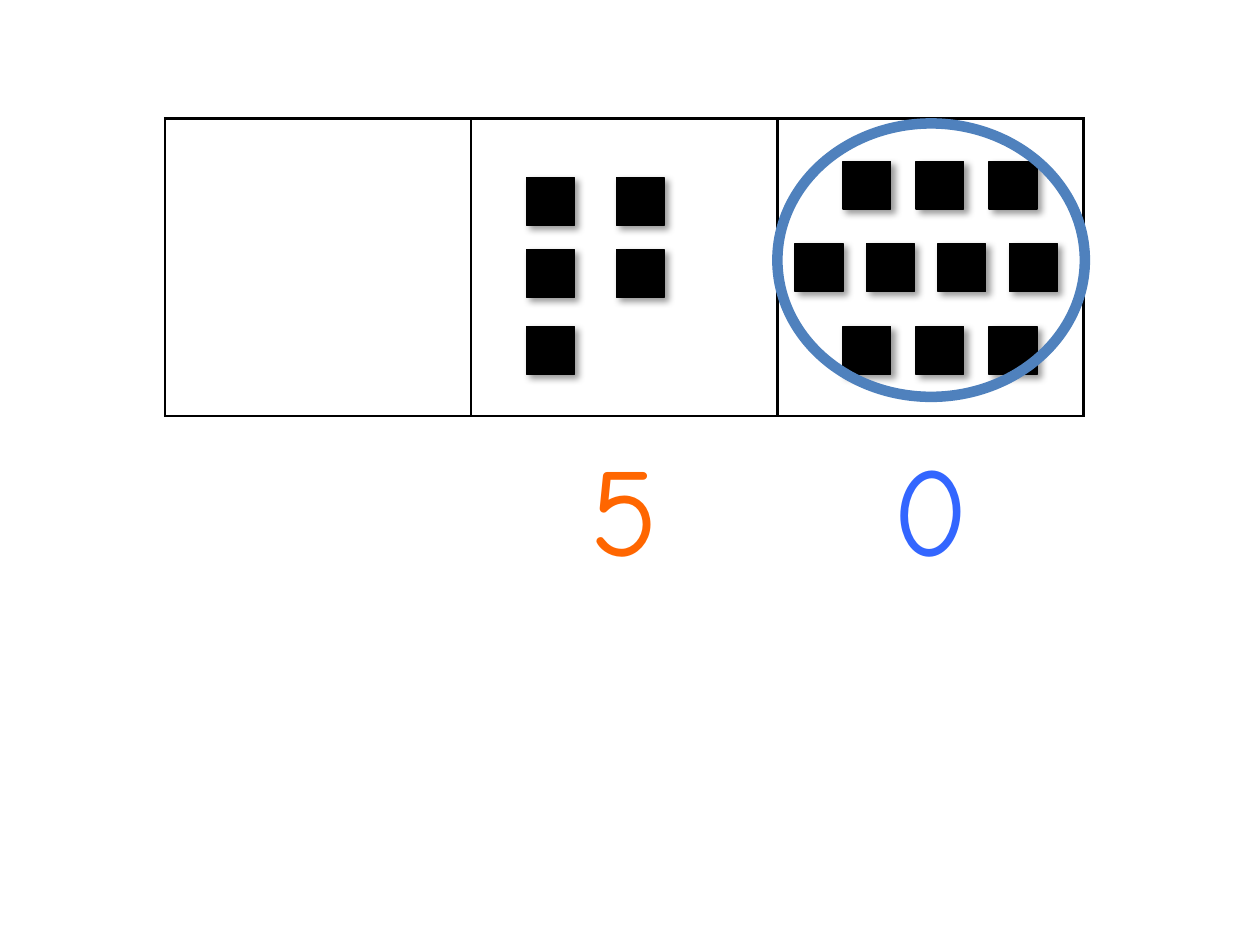
from itertools import product

from lxml.etree import SubElement
from pptx import Presentation
from pptx.dml.color import RGBColor
from pptx.enum.shapes import MSO_SHAPE as Shape
from pptx.enum.text import PP_ALIGN as Align
from pptx.oxml.ns import qn
from pptx.util import Inches, Pt

BLACK = RGBColor(0x00, 0x00, 0x00)
ORANGE = RGBColor(0xFF, 0x66, 0x00)
BLUE = RGBColor(0x33, 0x66, 0xFF)
RING_BLUE = RGBColor(0x4F, 0x81, 0xBD)

COLUMNS, ROWS = 100, 75
CHART_LEFT, CHART_WIDTH, CHART_HEIGHT = 13.1, 72.9, 23.6
COUNTER = 3.8


def write(frame, text, size=72, font="Comic Neue", color=BLACK, align=Align.CENTER):
    paragraph = frame.paragraphs[0]
    paragraph.alignment = align
    run = paragraph.add_run()
    run.text = text
    run.font.size = Pt(size)
    run.font.name = font
    run.font.color.rgb = color


class Board:
    def __init__(self, deck):
        self.slide = deck.slides.add_slide(deck.slide_layouts[6])
        self.column = deck.slide_width / COLUMNS
        self.row = deck.slide_height / ROWS

    def box(self, left, top, width, height):
        return (round(left * self.column), round(top * self.row),
                round(width * self.column), round(height * self.row))

    def place_table(self, top, digits, border=None):
        area = self.box(CHART_LEFT, top, CHART_WIDTH, CHART_HEIGHT)
        table = self.slide.shapes.add_table(1, len(digits), *area).table
        table.first_row = table.horz_banding = False
        for cell, (digit, color) in zip(table.rows[0].cells, digits):
            if digit:
                write(cell.text_frame, digit, color=color)
            self.border(cell, border)
            cell.fill.background()

    def border(self, cell, width):
        properties = cell._tc.get_or_add_tcPr()
        for side in ("a:lnL", "a:lnR", "a:lnT", "a:lnB"):
            edge = SubElement(properties, qn(side), w=str(Pt(width or 0)))
            if width:
                fill = SubElement(edge, qn("a:solidFill"))
                SubElement(fill, qn("a:srgbClr"), val=str(BLACK))
            else:
                SubElement(edge, qn("a:noFill"))

    def counter(self, left, top):
        square = self.slide.shapes.add_shape(
            Shape.RECTANGLE, *self.box(left, top, COUNTER, COUNTER))
        square.fill.solid()
        square.fill.fore_color.rgb = BLACK
        square.line.color.rgb = BLACK
        square.line.width = Pt(0.75)
        square.shadow.inherit = False
        effects = square._element.spPr.find(qn("a:effectLst"))
        shadow = SubElement(effects, qn("a:outerShdw"), blurRad=str(Pt(4)),
                            dist=str(Pt(3)), dir="2700000", algn="tl", rotWithShape="0")
        tint = SubElement(shadow, qn("a:srgbClr"), val=str(BLACK))
        SubElement(tint, qn("a:alpha"), val="40000")

    def ring(self, left, top, width, height):
        ellipse = self.slide.shapes.add_shape(
            Shape.OVAL, *self.box(left, top, width, height))
        ellipse.fill.background()
        ellipse.line.color.rgb = RING_BLUE
        ellipse.line.width = Pt(6)
        ellipse.shadow.inherit = False


def main():
    deck = Presentation()
    deck.slide_width, deck.slide_height = Inches(10), Inches(7.5)
    board = Board(deck)

    board.place_table(9.4, [("", BLACK)] * 3, border=1.5)
    board.place_table(34.7, [("", BLACK), ("5", ORANGE), ("0", BLUE)])

    tens = list(product((14.1, 19.8, 25.9), (41.8, 48.9)))[:5]
    for top, left in tens:
        board.counter(left, top)

    ones_rows = [(66.9, 3, 5.8), (63.1, 4, 5.67), (66.9, 3, 5.8)]
    for line, (start, count, pitch) in enumerate(ones_rows):
        for place in range(count):
            board.counter(start + place * pitch, 12.8 + line * 6.55)
    board.ring(61.7, 9.8, 24.4, 21.7)

    deck.save("out.pptx")


if __name__ == "__main__":
    main()
